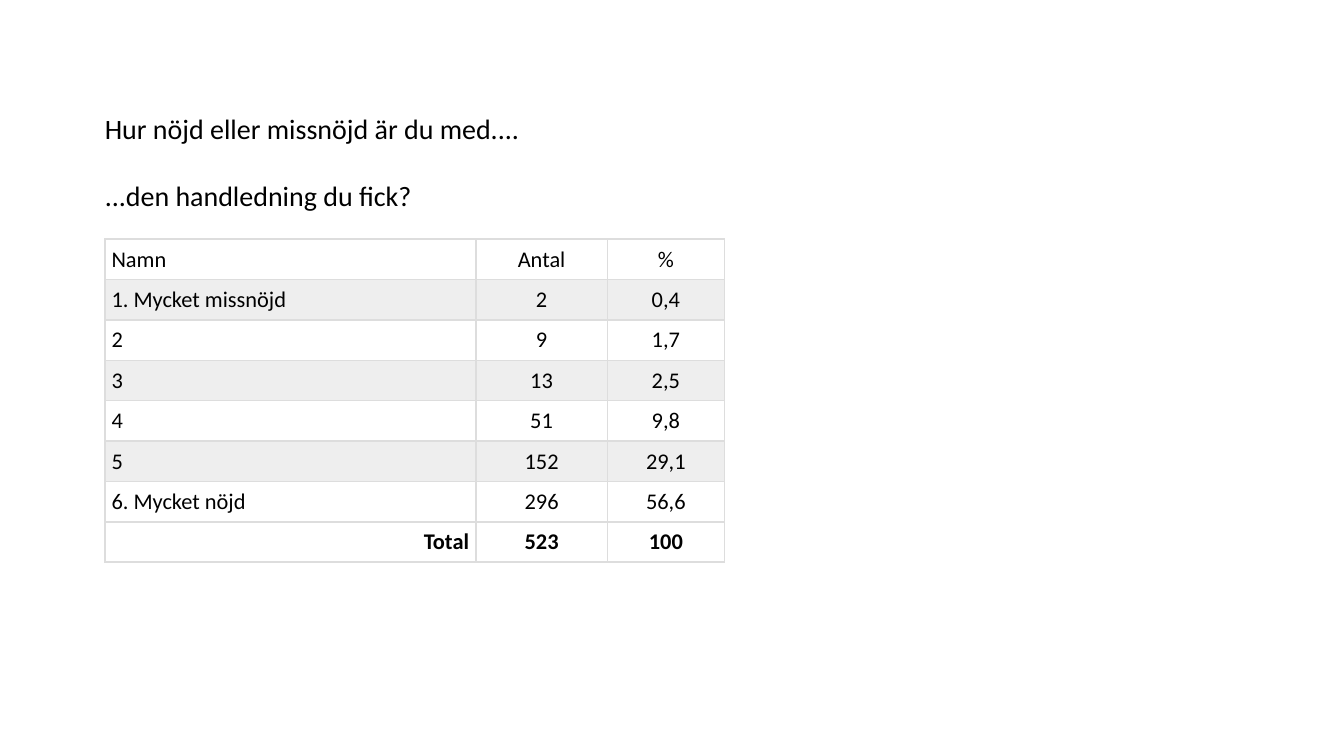
from typing import NamedTuple

from lxml.etree import SubElement
from pptx import Presentation
from pptx.dml.color import RGBColor
from pptx.enum.text import MSO_ANCHOR, MSO_AUTO_SIZE, PP_ALIGN
from pptx.oxml.ns import qn
from pptx.util import Inches, Pt

SLIDE_WIDTH = 10
SLIDE_HEIGHT = SLIDE_WIDTH * 9 / 16
LEFT = 0.78
ROW_HEIGHT = 0.3
COLUMN_WIDTHS = (2.76, 0.98, 0.87)
BLACK, WHITE, BAND, BORDER = "000000", "FFFFFF", "EEEEEE", "DDDDDD"


class Heading(NamedTuple):
    text: str
    top: float


class Answer(NamedTuple):
    name: str
    count: str
    percent: str


HEADINGS = (
    Heading("Hur nöjd eller missnöjd är du med....", 0.78),
    Heading("...den handledning du fick?", 1.28),
)
ANSWERS = (
    Answer("Namn", "Antal", "%"),
    Answer("1. Mycket missnöjd", "2", "0,4"),
    Answer("2", "9", "1,7"),
    Answer("3", "13", "2,5"),
    Answer("4", "51", "9,8"),
    Answer("5", "152", "29,1"),
    Answer("6. Mycket nöjd", "296", "56,6"),
    Answer("Total", "523", "100"),
)


def color(value: str) -> RGBColor:
    return RGBColor.from_string(value)


def write_text(text_frame, text: str, *, size: float, bold: bool = False,
               alignment: PP_ALIGN = PP_ALIGN.LEFT) -> None:
    paragraph = text_frame.paragraphs[0]
    paragraph.alignment = alignment
    run = paragraph.add_run()
    run.text = text
    run.font.name = "Calibri"
    run.font.size = Pt(size)
    run.font.bold = bold
    run.font.color.rgb = color(BLACK)


def set_borders(cell) -> None:
    properties = cell._tc.get_or_add_tcPr()
    for index, side in enumerate(("a:lnL", "a:lnR", "a:lnT", "a:lnB")):
        line = SubElement(properties, qn(side), w=str(Pt(1)))
        fill = SubElement(line, qn("a:solidFill"))
        SubElement(fill, qn("a:srgbClr"), val=BORDER)
        properties.insert(index, line)


def draw_heading(slide, heading: Heading) -> None:
    shape = slide.shapes.add_textbox(
        Inches(LEFT), Inches(heading.top), Inches(8.46), Inches(0.35))
    text_frame = shape.text_frame
    text_frame.word_wrap = True
    text_frame.auto_size = MSO_AUTO_SIZE.SHAPE_TO_FIT_TEXT
    text_frame.vertical_anchor = MSO_ANCHOR.MIDDLE
    text_frame.margin_left = text_frame.margin_right = 0
    text_frame.margin_top = text_frame.margin_bottom = Inches(0.05)
    write_text(text_frame, heading.text, size=15)


def draw_cell(cell, text: str, *, fill: str, bold: bool,
              alignment: PP_ALIGN) -> None:
    cell.margin_left = cell.margin_right = Inches(0.05)
    cell.margin_top = cell.margin_bottom = Inches(0.05)
    cell.fill.solid()
    cell.fill.fore_color.rgb = color(fill)
    set_borders(cell)
    write_text(cell.text_frame, text, size=12, bold=bold, alignment=alignment)


def draw_table(slide, answers: tuple[Answer, ...]) -> None:
    table = slide.shapes.add_table(
        len(answers), len(COLUMN_WIDTHS), Inches(LEFT), Inches(1.78),
        Inches(sum(COLUMN_WIDTHS)), Inches(ROW_HEIGHT * len(answers))).table
    table.first_row = table.horz_banding = False
    for column, width in zip(table.columns, COLUMN_WIDTHS):
        column.width = Inches(width)
    last_row = len(answers) - 1
    for row_index, answer in enumerate(answers):
        table.rows[row_index].height = Inches(ROW_HEIGHT)
        is_total = row_index == last_row
        fill = BAND if row_index % 2 and not is_total else WHITE
        name_alignment = PP_ALIGN.RIGHT if is_total else PP_ALIGN.LEFT
        for column_index, text in enumerate(answer):
            draw_cell(table.cell(row_index, column_index), text,
                      fill=fill, bold=is_total,
                      alignment=PP_ALIGN.CENTER if column_index else name_alignment)


def main() -> None:
    presentation = Presentation()
    presentation.slide_width = Inches(SLIDE_WIDTH)
    presentation.slide_height = Inches(SLIDE_HEIGHT)
    slide = presentation.slides.add_slide(presentation.slide_layouts[6])
    for heading in HEADINGS:
        draw_heading(slide, heading)
    draw_table(slide, ANSWERS)
    presentation.save("out.pptx")


if __name__ == "__main__":
    main()
